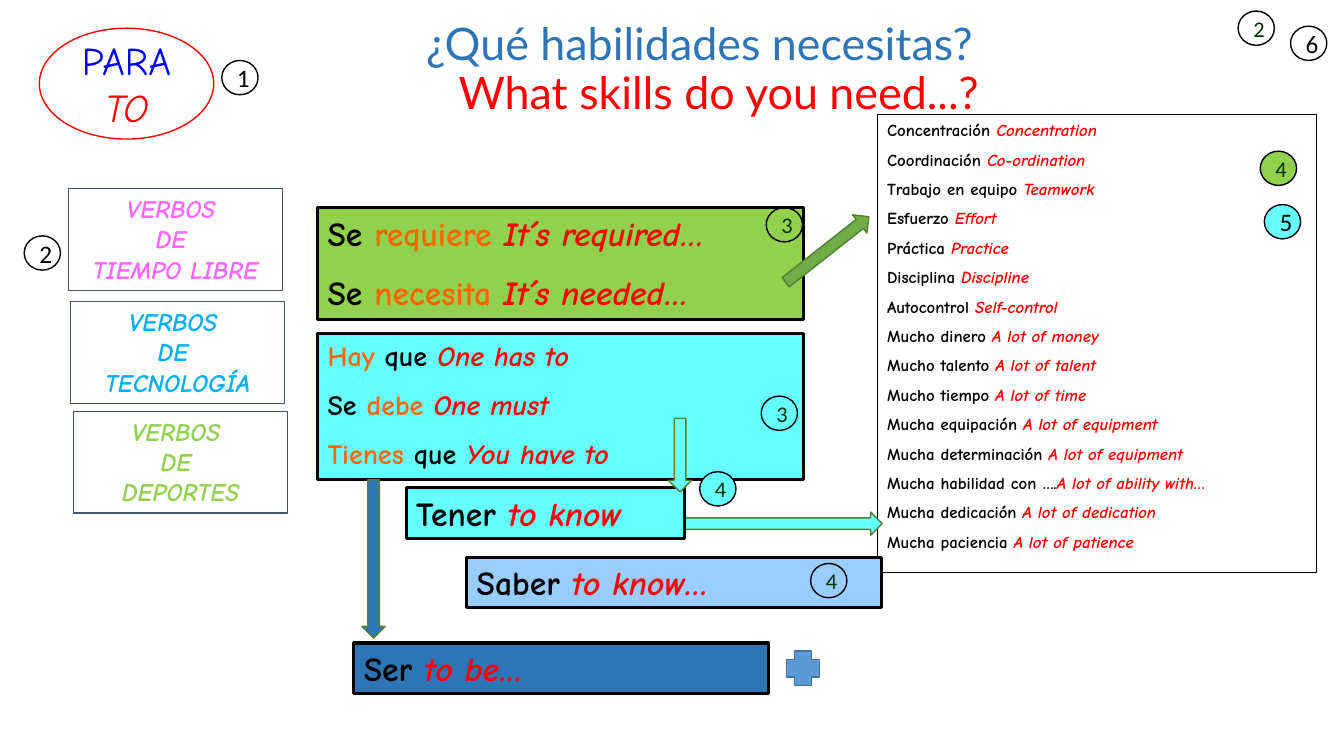
from pptx import Presentation
from pptx.dml.color import RGBColor
from pptx.enum.shapes import MSO_SHAPE
from pptx.enum.text import MSO_ANCHOR, PP_ALIGN
from pptx.util import Inches, Pt

BLACK = RGBColor(0x00, 0x00, 0x00)
WHITE = RGBColor(0xFF, 0xFF, 0xFF)
RED = RGBColor(0xFF, 0x00, 0x00)
BLUE = RGBColor(0x00, 0x00, 0xFF)
ORANGE = RGBColor(0xFF, 0x66, 0x00)
PINK = RGBColor(0xFF, 0x66, 0xFF)
SKY = RGBColor(0x00, 0xB0, 0xF0)
LIME = RGBColor(0x92, 0xD0, 0x50)
AQUA = RGBColor(0x66, 0xFF, 0xFF)
PALE_BLUE = RGBColor(0x99, 0xCC, 0xFF)
DEEP_BLUE = RGBColor(0x2E, 0x75, 0xB6)
SLATE = RGBColor(0x44, 0x54, 0x6A)
DARK_GREEN = RGBColor(0x00, 0x33, 0x00)
LEAF = RGBColor(0x70, 0xAD, 0x47)
LEAF_EDGE = RGBColor(0x53, 0x80, 0x35)
PLUS_BLUE = RGBColor(0x5B, 0x9B, 0xD5)
PLUS_EDGE = RGBColor(0x43, 0x73, 0x9E)

SKILLS = [
    ("Concentración ", "Concentration"),
    ("Coordinación ", "Co-ordination"),
    ("Trabajo en equipo ", "Teamwork"),
    ("Esfuerzo ", "Effort"),
    ("Práctica ", "Practice"),
    ("Disciplina ", "Discipline"),
    ("Autocontrol ", "Self-control"),
    ("Mucho dinero ", "A lot of money"),
    ("Mucho talento ", "A lot of talent"),
    ("Mucho tiempo ", "A lot of time"),
    ("Mucha equipación ", "A lot of equipment"),
    ("Mucha determinación ", "A lot of equipment"),
    ("Mucha habilidad con ….", "A lot of ability with…"),
    ("Mucha dedicación ", "A lot of dedication"),
    ("Mucha paciencia ", "A lot of patience"),
]


def plain(text, color=BLACK):
    return text, color, False


def italic(text, color=RED):
    return text, color, True


class SlideBuilder:
    hand_font = "Comic Neue"
    title_font = "Lato"
    number_font = "Calibri"
    gap_ratio = 0.55

    def __init__(self, page):
        self.page = page

    def shape(self, kind, left, top, width, height, fill, line, weight=1, rotation=0):
        shape = self.page.shapes.add_shape(
            kind, Inches(left), Inches(top), Inches(width), Inches(height))
        shape.shadow.inherit = False
        shape.rotation = rotation
        if fill is None:
            shape.fill.background()
        else:
            shape.fill.solid()
            shape.fill.fore_color.rgb = fill
        shape.line.color.rgb = line
        shape.line.width = Pt(weight)
        return shape

    def add_spans(self, para, spans):
        for text, color, slanted in spans:
            span = para.add_run()
            span.text = text
            span.font.color.rgb = color
            span.font.italic = slanted

    def add_text(self, box, lines, size, font, bold=False, align=PP_ALIGN.LEFT,
                 anchor=MSO_ANCHOR.TOP, gap=0):
        frame = box.text_frame
        frame.word_wrap = True
        frame.vertical_anchor = anchor
        for index, spans in enumerate(lines):
            para = frame.add_paragraph() if index else frame.paragraphs[0]
            para.alignment = align
            para.space_before = Pt(gap if index else 0)
            para.font.name = font
            para.font.size = Pt(size)
            para.font.bold = bold
            self.add_spans(para, spans)

    def title(self, spanish, english):
        box = self.page.shapes.add_textbox(Inches(2.44), Inches(0.28), Inches(9), Inches(0.95))
        self.add_text(box, [[plain(spanish, DEEP_BLUE)]], 32, self.title_font,
                      align=PP_ALIGN.CENTER, anchor=MSO_ANCHOR.BOTTOM)
        para = box.text_frame.paragraphs[0]
        para.line_spacing = 0.9
        para.add_line_break()
        self.add_spans(para, [plain(english, RED)])
        properties = para._p.get_or_add_pPr()
        properties.set("marL", str(Inches(0.38)))
        properties.set("indent", str(Inches(-0.38)))

    def phrases(self, left, top, width, height, lines, size=24, fill=None, weight=2.25):
        box = self.shape(MSO_SHAPE.RECTANGLE, left, top, width, height, fill, BLACK, weight)
        self.add_text(box, lines, size, self.hand_font, bold=True, gap=size * self.gap_ratio)

    def verbs(self, left, top, topic, color):
        box = self.shape(MSO_SHAPE.RECTANGLE, left, top, 2.12, 1.01, None, SLATE, 0.75)
        lines = [[italic(text, color)] for text in ("VERBOS ", "DE ", topic)]
        self.add_text(box, lines, 18, self.hand_font, bold=True, align=PP_ALIGN.CENTER)

    def purpose(self):
        oval = self.shape(MSO_SHAPE.OVAL, 0.39, 0.28, 1.73, 1.1, WHITE, RED)
        self.add_text(oval, [[plain("PARA", BLUE)], [italic("TO")]], 28, self.hand_font,
                      align=PP_ALIGN.CENTER, anchor=MSO_ANCHOR.MIDDLE)

    def number(self, left, top, text, size=16, color=DARK_GREEN, fill=None):
        circle = self.shape(MSO_SHAPE.OVAL, left, top, 0.36, 0.34, fill, BLACK)
        self.add_text(circle, [[plain(text, color)]], size, self.number_font,
                      align=PP_ALIGN.CENTER, anchor=MSO_ANCHOR.MIDDLE)

    def big_number(self, left, top, text, fill=None):
        self.number(left, top, text, 18, BLACK, fill)

    def arrow(self, left, top, length, fill, rotation=0):
        self.shape(MSO_SHAPE.DOWN_ARROW, left, top, 0.23, length, fill, LEAF_EDGE,
                   rotation=rotation)


def main():
    deck = Presentation()
    deck.slide_width = Inches(13.33)
    deck.slide_height = Inches(7.5)
    slide = SlideBuilder(deck.slides.add_slide(deck.slide_layouts[6]))

    slide.title("¿Qué habilidades necesitas?", "What skills do you need...?")
    slide.phrases(3.15, 2.06, 4.82, 1.11, [
        [plain("Se "), plain("requiere ", ORANGE), italic("It´s required…")],
        [plain("Se "), plain("necesita ", ORANGE), italic("It´s needed…")],
    ], fill=LIME)
    slide.number(12.28, 0.11, "2")
    slide.number(12.5, 1.5, "4", fill=LIME)
    slide.number(7.6, 2.06, "3")
    slide.big_number(12.8, 0.26, "6")
    slide.purpose()
    slide.big_number(2.2, 0.6, "1")
    slide.big_number(0.24, 2.34, "2")

    for left, top, topic, color in [
        (0.68, 1.87, "TIEMPO LIBRE", PINK),
        (0.7, 2.99, "TECNOLOGÍA", SKY),
        (0.73, 4.08, "DEPORTES", LIME),
    ]:
        slide.verbs(left, top, topic, color)

    slide.phrases(3.15, 3.31, 4.82, 1.45, [
        [plain("Hay ", ORANGE), plain("que "), italic("One has to")],
        [plain("Se "), plain("debe ", ORANGE), italic("One must")],
        [plain("Tienes", ORANGE), plain(" que "), italic("You have to")],
    ], size=20, fill=AQUA)
    slide.arrow(8.09, 1.95, 1.05, LEAF, 231.8)
    slide.phrases(8.7, 1.14, 4.36, 4.54,
                  [[plain(spanish), italic(english)] for spanish, english in SKILLS],
                  size=12, weight=0.75)
    slide.arrow(7.6, 4.16, 2.07, AQUA, 270)

    slide.phrases(4.63, 5.53, 4.11, 0.5, [[plain("Saber "), italic("to know…")]], fill=PALE_BLUE)
    slide.phrases(4.03, 4.84, 2.76, 0.5, [[plain("Tener "), italic("to know")]], fill=AQUA)
    slide.arrow(6.63, 4.15, 0.73, AQUA)
    slide.number(7.55, 3.93, "3")
    slide.phrases(3.51, 6.38, 4.11, 0.5, [[plain("Ser "), italic("to be…")]], fill=DEEP_BLUE)
    slide.big_number(12.54, 2.03, "5", AQUA)
    slide.number(6.94, 4.68, "4", fill=AQUA)
    slide.number(8.04, 5.59, "4")
    slide.arrow(3.59, 4.76, 1.57, DEEP_BLUE)
    slide.shape(MSO_SHAPE.CROSS, 7.8, 6.46, 0.33, 0.34, PLUS_BLUE, PLUS_EDGE)

    deck.save("out.pptx")


if __name__ == "__main__":
    main()
